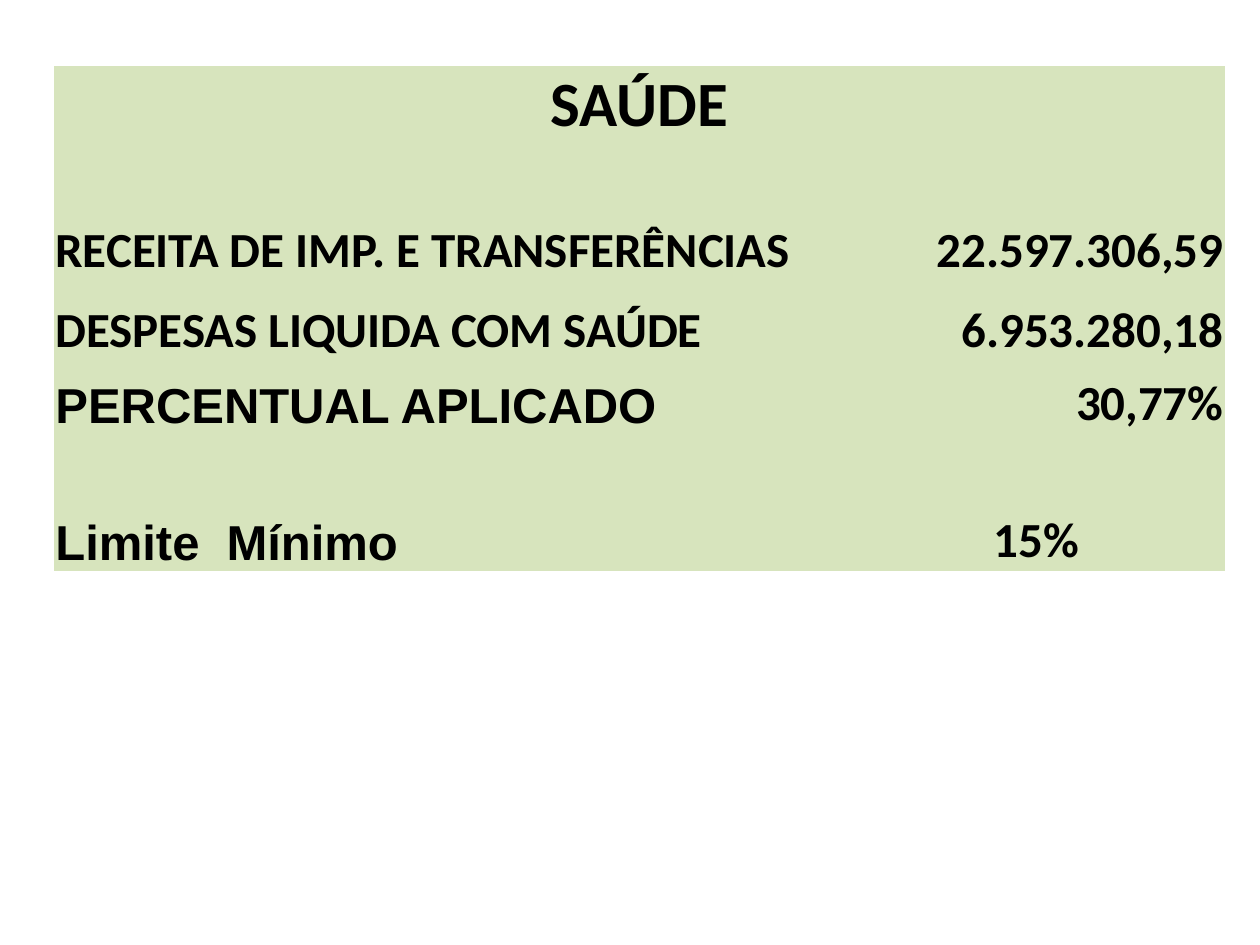
from pptx import Presentation
from pptx.dml.color import RGBColor
from pptx.enum.text import MSO_ANCHOR, PP_ALIGN
from pptx.util import Inches, Pt

# Content: label, label font, value, value alignment, row height
HEADING = "SAÚDE"
HEADING_HEIGHT = 0.61
HEALTH_ROWS = [
    ("RECEITA DE IMP. E TRANSFERÊNCIAS", "Calibri", "22.597.306,59", PP_ALIGN.RIGHT, 1.09),
    ("DESPESAS LIQUIDA COM SAÚDE", "Calibri", "6.953.280,18", PP_ALIGN.RIGHT, 0.63),
    ("PERCENTUAL APLICADO", "Arial", "30,77%", PP_ALIGN.RIGHT, 0.58),
    ("Limite  Mínimo", "Arial", "15%", PP_ALIGN.CENTER, 1.09),
]
COLUMN_WIDTHS = [6.3, 2.99]
LEFT, TOP = 0.43, 0.52

THEME = {
    "fill": RGBColor.from_string("D7E4BD"),
    "text": RGBColor.from_string("000000"),
    "font": "Calibri",
    "heading_size": Pt(36),
    "body_size": Pt(28),
}
CELL_FORMAT = {
    "vertical_anchor": MSO_ANCHOR.BOTTOM,
    "margin_left": Inches(0.01),
    "margin_right": Inches(0.01),
    "margin_top": Inches(0.01),
    "margin_bottom": 0,
}


def fill_cell(cell, text, alignment, font_name=THEME["font"], size=THEME["body_size"]):
    for name, value in CELL_FORMAT.items():
        setattr(cell, name, value)
    cell.fill.solid()
    cell.fill.fore_color.rgb = THEME["fill"]
    paragraph = cell.text_frame.paragraphs[0]
    paragraph.alignment = alignment
    run = paragraph.add_run()
    run.text = text
    for name, value in {"name": font_name, "size": size, "bold": True}.items():
        setattr(run.font, name, value)
    run.font.color.rgb = THEME["text"]


# Slide
presentation = Presentation()
presentation.slide_width, presentation.slide_height = Inches(10), Inches(7.5)
slide = presentation.slides.add_slide(presentation.slide_layouts[6])

# Table grid
row_heights = [HEADING_HEIGHT] + [row[-1] for row in HEALTH_ROWS]
health_table = slide.shapes.add_table(
    len(row_heights), len(COLUMN_WIDTHS), Inches(LEFT), Inches(TOP),
    Inches(sum(COLUMN_WIDTHS)), Inches(sum(row_heights)),
).table
health_table.first_row = health_table.horz_banding = False
for column, width in zip(health_table.columns, COLUMN_WIDTHS):
    column.width = Inches(width)
for row, height in zip(health_table.rows, row_heights):
    row.height = Inches(height)

# Heading across both columns
heading_cell = health_table.cell(0, 0)
heading_cell.merge(health_table.cell(0, 1))
fill_cell(heading_cell, HEADING, PP_ALIGN.CENTER, size=THEME["heading_size"])

# Labels and values
for index, (label, label_font, amount, amount_alignment, _) in enumerate(HEALTH_ROWS, 1):
    fill_cell(health_table.cell(index, 0), label, PP_ALIGN.LEFT, label_font)
    fill_cell(health_table.cell(index, 1), amount, amount_alignment)

# The default style draws white borders; use the plain "No Style, No Grid" one
style_id = health_table._tbl.tblPr.find(
    "{http://schemas.openxmlformats.org/drawingml/2006/main}tableStyleId")
style_id.text = "{2D5ABB26-0587-4C30-8999-92F81FD0307C}"

presentation.save("out.pptx")
